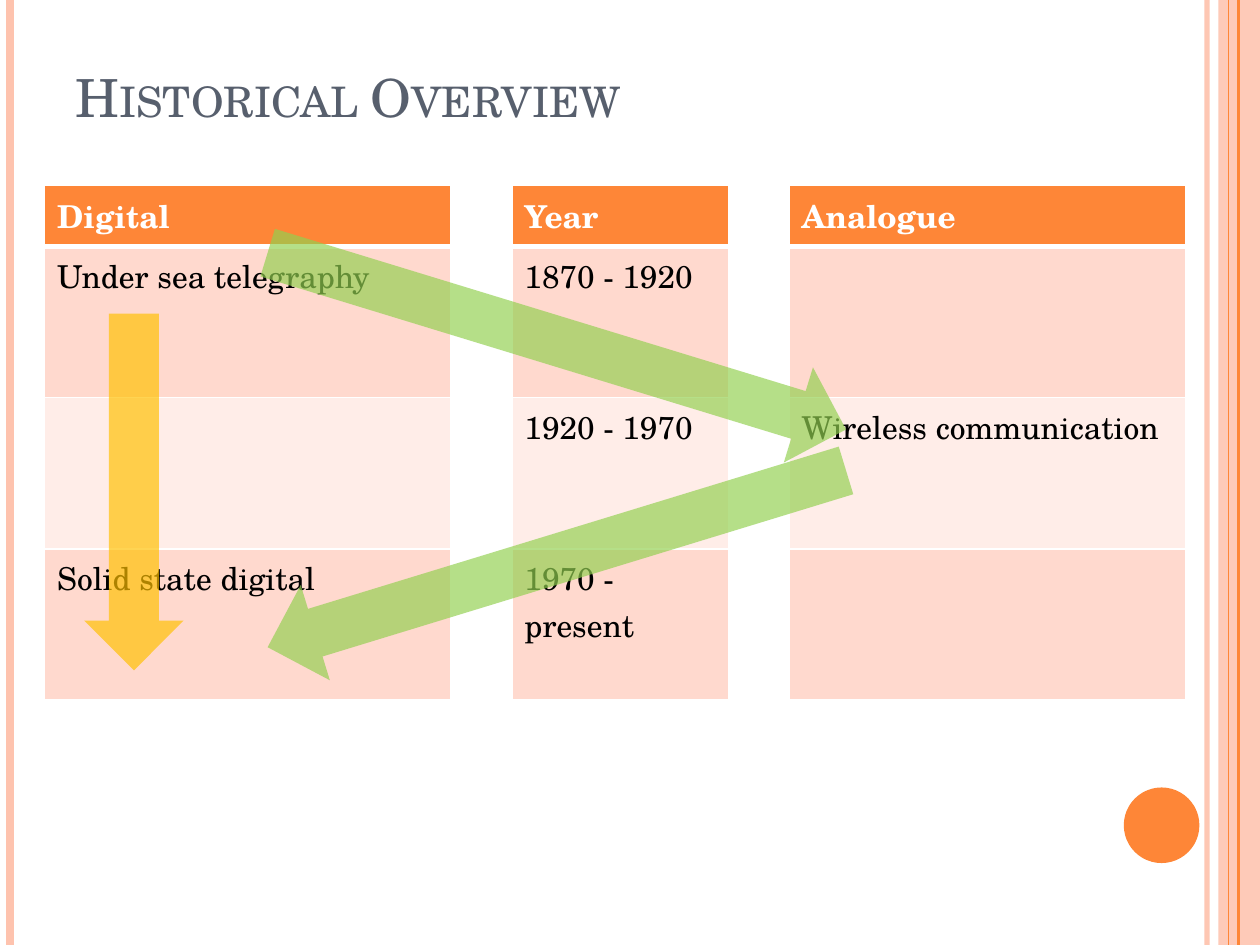
from dataclasses import dataclass

from pptx import Presentation
from pptx import util as u
from pptx.dml import color
from pptx.enum import shapes, text
from pptx.oxml import ns, xmlchemy

FONT = "TeX Gyre Schola"
ORANGE, PEACH, GREEN, GOLD = "FE8637", "FEC3AE", "92D050", "FFC000"
WHITE, BLACK, SLATE = "FFFFFF", "000000", "575F6D"
BANDS = ("FFD9CE", "FFEDE8")
SLIDE_WIDTH, SLIDE_HEIGHT = 720, 540
TABLE_TOP, HEADER_HEIGHT, ROW_HEIGHT = 105.8, 33.8, 86.4
HEADER_RULE, GRID_RULE = 3, 1
ARROW_THICKNESS, ARROW_OPACITY = 56.9, 68


@dataclass
class Rule:
    x: float
    width: float
    color: str
    opacity: int = 100


@dataclass
class Column:
    left: float
    width: float
    heading: str
    entries: tuple[str, ...]


@dataclass
class Arrow:
    center_x: float
    center_y: float
    length: float
    rotation: float
    color: str


RULES = (
    Rule(689.8, 3, PEACH, 93),
    Rule(5.8, 4.5, PEACH),
    Rule(707.8, 1.5, ORANGE),
    Rule(702, 0.75, ORANGE),
)
COLUMNS = (
    Column(25.5, 232.3, "Digital", ("Under sea telegraphy", "", "Solid state digital")),
    Column(450.9, 226.5, "Analogue", ("", "Wireless communication", "")),
    Column(292.5, 123.7, "Year", ("1870 - 1920", "1920 - 1970", "1970 - present")),
)
ARROWS = (
    Arrow(318.2, 194.9, 345.6, 17, GREEN),
    Arrow(318.2, 319.3, 345.6, 180 - 17, GREEN),
    Arrow(76.5, 281.2, 203.8, 90, GOLD),
)


def rgb(value: str) -> color.RGBColor:
    return color.RGBColor.from_string(value)


def add_child(parent, tag: str, **attributes):
    child = xmlchemy.OxmlElement(tag)
    for name, value in attributes.items():
        child.set(name, str(value))
    parent.append(child)
    return child


def set_opacity(shape, percent: int) -> None:
    if percent < 100:
        for paint in shape.element.iter(ns.qn("a:srgbClr")):
            add_child(paint, "a:alpha", val=percent * 1000)


def format_font(font, hex_color: str, **values) -> None:
    for name, value in {"name": FONT, **values}.items():
        setattr(font, name, value)
    font.color.rgb = rgb(hex_color)


def draw_rule(slide, rule: Rule) -> None:
    connector = slide.shapes.add_connector(
        shapes.MSO_CONNECTOR.STRAIGHT,
        u.Pt(rule.x), u.Pt(0), u.Pt(rule.x), u.Pt(SLIDE_HEIGHT),
    )
    connector.line.width = u.Pt(rule.width)
    connector.line.color.rgb = rgb(rule.color)
    set_opacity(connector, rule.opacity)
    add_child(connector.element.spPr, "a:effectLst")


def draw_solid(slide, preset, box: tuple[float, ...], hex_color: str, opacity: int = 100):
    solid = slide.shapes.add_shape(preset, *map(u.Pt, box))
    solid.shadow.inherit = False
    solid.fill.solid()
    solid.fill.fore_color.rgb = rgb(hex_color)
    solid.line.fill.background()
    set_opacity(solid, opacity)
    return solid


def draw_arrow(slide, arrow: Arrow) -> None:
    box = (
        arrow.center_x - arrow.length / 2,
        arrow.center_y - ARROW_THICKNESS / 2,
        arrow.length,
        ARROW_THICKNESS,
    )
    solid = draw_solid(slide, shapes.MSO_SHAPE.RIGHT_ARROW, box, arrow.color, ARROW_OPACITY)
    solid.rotation = arrow.rotation


def set_borders(cell, top: float, bottom: float) -> None:
    """Draw white borders; cell borders must precede the fill in the XML."""
    properties = cell._tc.get_or_add_tcPr()
    widths = {"a:lnL": GRID_RULE, "a:lnR": GRID_RULE, "a:lnT": top, "a:lnB": bottom}
    for tag, width in widths.items():
        fill = add_child(add_child(properties, tag, w=u.Pt(width)), "a:solidFill")
        add_child(fill, "a:srgbClr", val=WHITE)


def draw_column(slide, column: Column) -> None:
    contents = (column.heading, *column.entries)
    height = HEADER_HEIGHT + ROW_HEIGHT * len(column.entries)
    table = slide.shapes.add_table(
        len(contents), 1,
        u.Pt(column.left), u.Pt(TABLE_TOP), u.Pt(column.width), u.Pt(height),
    ).table
    for index, content in enumerate(contents):
        is_header = index == 0
        table.rows[index].height = u.Pt(HEADER_HEIGHT if is_header else ROW_HEIGHT)
        cell = table.cell(index, 0)
        set_borders(
            cell,
            top=HEADER_RULE if index == 1 else GRID_RULE,
            bottom=HEADER_RULE if is_header else GRID_RULE,
        )
        cell.fill.solid()
        cell.fill.fore_color.rgb = rgb(ORANGE if is_header else BANDS[(index - 1) % 2])
        if content:
            run = cell.text_frame.paragraphs[0].add_run()
            run.text = content
            format_font(run.font, WHITE if is_header else BLACK, size=u.Pt(18), bold=is_header)


def write_title(slide) -> None:
    title = slide.shapes.title
    box = {"left": 36, "top": 21.6, "width": 624, "height": 55.4}
    for name, value in box.items():
        setattr(title, name, u.Pt(value))
    title.text_frame.vertical_anchor = text.MSO_ANCHOR.BOTTOM
    paragraph = title.text_frame.paragraphs[0]
    paragraph.alignment = text.PP_ALIGN.LEFT
    run = paragraph.add_run()
    run.text = "Historical Overview"
    format_font(run.font, SLATE, size=u.Pt(30))
    run._r.get_or_add_rPr().set("cap", "small")


def main() -> None:
    presentation = Presentation()
    presentation.slide_width = u.Pt(SLIDE_WIDTH)
    presentation.slide_height = u.Pt(SLIDE_HEIGHT)
    slide = presentation.slides.add_slide(presentation.slide_layouts[5])

    side_band = (696.2, 0, SLIDE_WIDTH - 696.2, SLIDE_HEIGHT)
    draw_solid(slide, shapes.MSO_SHAPE.RECTANGLE, side_band, PEACH, 87)
    for rule in RULES:
        draw_rule(slide, rule)
    draw_solid(slide, shapes.MSO_SHAPE.OVAL, (642.2, 450, 43.2, 43.2), ORANGE)

    write_title(slide)
    for column in COLUMNS:
        draw_column(slide, column)
    for arrow in ARROWS:
        draw_arrow(slide, arrow)
    presentation.save("out.pptx")


if __name__ == "__main__":
    main()
